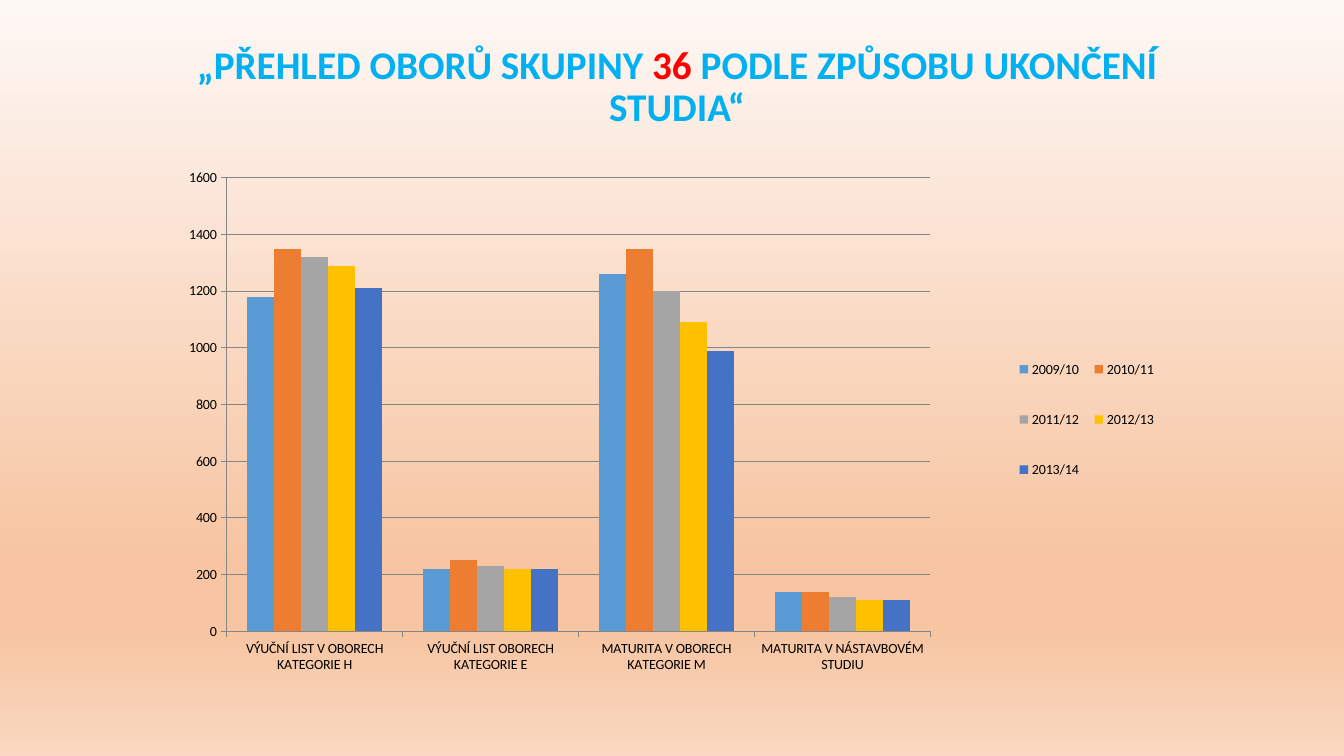
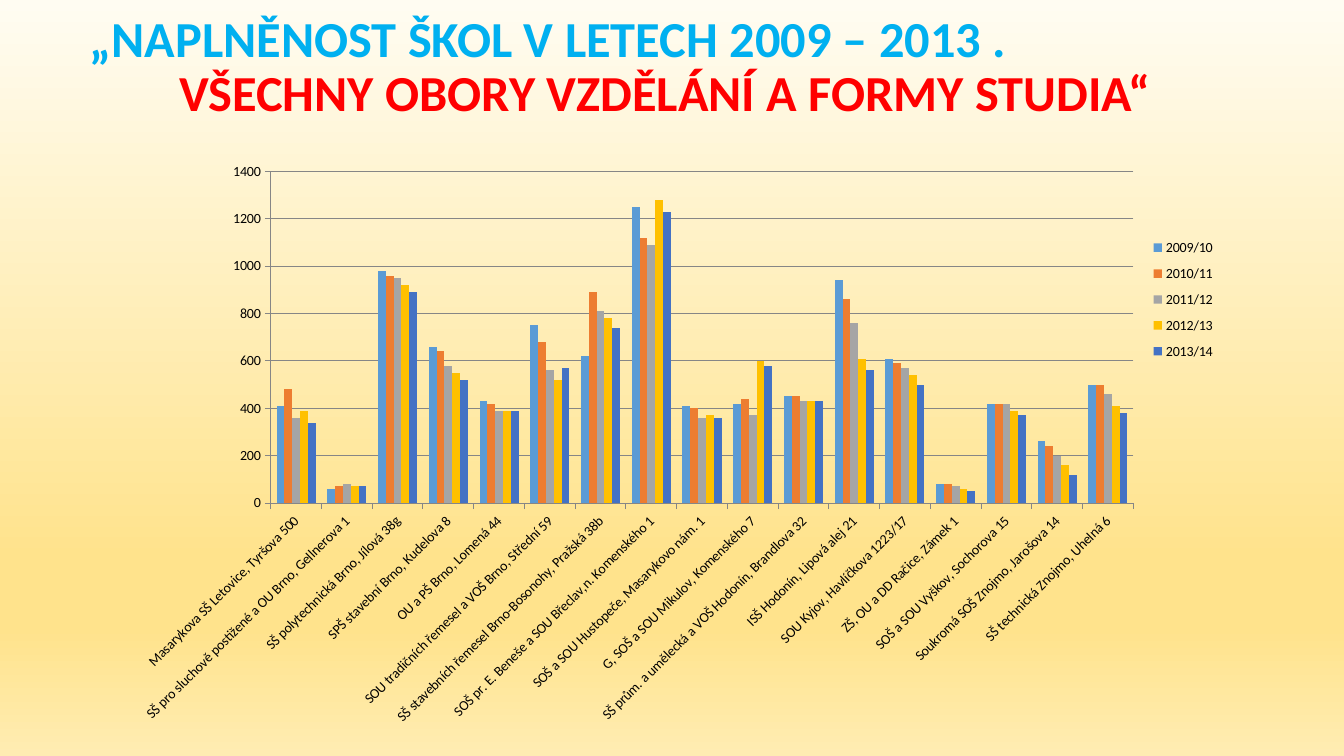
from lxml import etree
from pptx import Presentation
from pptx import util as u
from pptx.chart.data import CategoryChartData
from pptx.dml.color import RGBColor
from pptx.enum import chart as ch, text as tx
from pptx.oxml.ns import qn

PX = 914400 / 100.8
WIDE, HIGH = 1344, 756
FONT = "Calibri"
SKY = RGBColor(0x00, 0xB0, 0xF0)
RED = RGBColor(0xFF, 0x00, 0x00)
BLACK = RGBColor(0x00, 0x00, 0x00)
GREY = RGBColor(0x86, 0x86, 0x86)
HUES = [RGBColor(0x5B, 0x9B, 0xD5), RGBColor(0xED, 0x7D, 0x31),
        RGBColor(0xA5, 0xA5, 0xA5), RGBColor(0xFF, 0xC0, 0x00),
        RGBColor(0x44, 0x72, 0xC4)]
STOPS = (0, 74, 83, 100)
PEACH = [RGBColor(0xFE, 0xF8, 0xF5), RGBColor(0xF7, 0xC5, 0xA2),
         RGBColor(0xF7, 0xC5, 0xA2), RGBColor(0xFA, 0xD8, 0xC1)]
GOLD = [RGBColor(0xFF, 0xFC, 0xF2), RGBColor(0xFF, 0xE3, 0x8C),
        RGBColor(0xFF, 0xE3, 0x8C), RGBColor(0xFF, 0xEC, 0xB2)]
YEARS = ["2009/10", "2010/11", "2011/12", "2012/13", "2013/14"]

EXAMS = [
    ("VÝUČNÍ LIST V OBORECH KATEGORIE H", (1180, 1350, 1320, 1290, 1210)),
    ("VÝUČNÍ LIST OBORECH KATEGORIE E", (220, 250, 230, 220, 220)),
    ("MATURITA V OBORECH KATEGORIE M", (1260, 1350, 1200, 1090, 990)),
    ("MATURITA V NÁSTAVBOVÉM STUDIU", (140, 140, 120, 110, 110)),
]
SCHOOLS = [
    ("Masarykova SŠ Letovice, Tyršova 500", (410, 480, 360, 390, 340)),
    ("SŠ pro sluchově postižené a OU Brno, Gellnerova 1", (60, 70, 80, 70, 70)),
    ("SŠ polytechnická Brno, Jílová 38g", (980, 960, 950, 920, 890)),
    ("SPŠ stavební Brno, Kudelova 8", (660, 640, 580, 550, 520)),
    ("OU a PŠ Brno, Lomená 44", (430, 420, 390, 390, 390)),
    ("SOU tradičních řemesel a VOŠ Brno, Střední 59", (750, 680, 560, 520, 570)),
    ("SŠ stavebních řemesel Brno-Bosonohy, Pražská 38b", (620, 890, 810, 780, 740)),
    ("SOŠ pr. E. Beneše a SOU Břeclav,n. Komenského 1", (1250, 1120, 1090, 1280, 1230)),
    ("SOŠ a SOU Hustopeče, Masarykovo nám. 1", (410, 400, 360, 370, 360)),
    ("G, SOŠ a SOU Mikulov, Komenského 7", (420, 440, 370, 600, 580)),
    ("SŠ prům. a umělecká a VOŠ Hodonín, Brandlova 32", (450, 450, 430, 430, 430)),
    ("ISŠ Hodonín, Lipová alej 21", (940, 860, 760, 610, 560)),
    ("SOU Kyjov, Havlíčkova 1223/17", (610, 590, 570, 540, 500)),
    ("ZŠ, OU a DD Račice, Zámek 1", (80, 80, 70, 60, 50)),
    ("SOŠ a SOU Vyškov, Sochorova 15", (420, 420, 420, 390, 370)),
    ("Soukromá SOŠ Znojmo, Jarošova 14", (260, 240, 200, 160, 120)),
    ("SŠ technická Znojmo, Uhelná 6", (500, 500, 460, 410, 380)),
]


def px(num):
    return u.Emu(round(num * PX))


def add_page(deck, tints):
    page = deck.slides.add_slide(deck.slide_layouts[6])
    fill = page.background.fill
    fill.gradient()
    fill.gradient_angle = 270
    ramp = page.element.find(".//" + qn("a:gsLst"))
    for stop in list(ramp):
        ramp.remove(stop)
    for pos, tint in zip(STOPS, tints):
        stop = etree.SubElement(ramp, qn("a:gs"), pos=str(pos * 1000))
        etree.SubElement(stop, qn("a:srgbClr"), val=str(tint))
    return page


def add_title(page, box, size, lines):
    frame = page.shapes.add_textbox(*map(px, box)).text_frame
    frame.word_wrap = True
    frame.vertical_anchor = tx.MSO_ANCHOR.MIDDLE
    for row, (inset, runs) in enumerate(lines):
        para = frame.add_paragraph() if row else frame.paragraphs[0]
        para.line_spacing = 0.9
        para.alignment = tx.PP_ALIGN.LEFT if inset else tx.PP_ALIGN.CENTER
        if inset:
            para._p.get_or_add_pPr().set("marL", str(px(inset)))
        for words, hue in runs:
            run = para.add_run()
            run.text = words
            font = run.font
            font.name, font.size, font.bold = FONT, u.Pt(size), True
            font.color.rgb = hue


def set_place(part, slot, area, inner=False):
    for old in part.findall(qn("c:layout")):
        part.remove(old)
    node = etree.Element(qn("c:layout"))
    part.insert(slot, node)
    man = etree.SubElement(node, qn("c:manualLayout"))
    rules = [("layoutTarget", "inner")] if inner else []
    rules += [("xMode", "edge"), ("yMode", "edge")]
    rules += zip("xywh", map(str, area))
    for name, val in rules:
        etree.SubElement(man, qn("c:" + name), val=val)


def style_line(line):
    line.color.rgb = GREY
    line.width = u.Pt(0.75)


def add_bars(page, box, rows, top, plot, key, turn=0):
    data = CategoryChartData()
    data.categories = [name for name, _ in rows]
    for year, vals in zip(YEARS, zip(*(vals for _, vals in rows))):
        data.add_series(year, vals)
    kind = ch.XL_CHART_TYPE.COLUMN_CLUSTERED
    chart = page.shapes.add_chart(kind, *map(px, box), data).chart
    chart.has_title = False
    chart.font.name, chart.font.size = FONT, u.Pt(10)
    chart.font.color.rgb = BLACK

    bars = chart.plots[0]
    bars.gap_width, bars.overlap = 150, 0
    bars.vary_by_categories = False
    for bar, hue in zip(bars.series, HUES):
        bar.format.fill.solid()
        bar.format.fill.fore_color.rgb = hue

    base, scale = chart.category_axis, chart.value_axis
    for axis in (base, scale):
        axis.major_tick_mark = ch.XL_TICK_MARK.OUTSIDE
        style_line(axis.format.line)
    scale.minimum_scale, scale.maximum_scale = 0, top
    scale.major_unit = 200
    scale.has_major_gridlines = True
    style_line(scale.major_gridlines.format.line)
    if turn:
        base.tick_labels.font.size = u.Pt(10)
        body = base._element.find(qn("c:txPr")).find(qn("a:bodyPr"))
        body.set("rot", str(turn * 60000))

    chart.has_legend = True
    chart.legend.position = ch.XL_LEGEND_POSITION.RIGHT
    chart.legend.include_in_layout = False
    set_place(chart.legend._element, 1, key)
    area = chart._chartSpace.find(".//" + qn("c:plotArea"))
    set_place(area, 0, plot, True)


def main():
    deck = Presentation()
    deck.slide_width, deck.slide_height = px(WIDE), px(HIGH)

    page = add_page(deck, PEACH)
    add_title(page, (183, 12, 988, 152), 28, [
        (0, [("„PŘEHLED OBORŮ SKUPINY ", SKY), ("36", RED),
             (" PODLE ZPŮSOBU UKONČENÍ STUDIA“", SKY)])])
    add_bars(page, (115, 136, 1117, 597), EXAMS, 1600,
             (0.1, 0.07, 0.63, 0.76), (0.8, 0.32, 0.14, 0.31))

    page = add_page(deck, GOLD)
    add_title(page, (0, 11, 1330, 115), 36, [
        (80, [("„NAPLNĚNOST ŠKOL V LETECH 2009 – 2013 .", SKY)]),
        (0, [("VŠECHNY OBORY VZDĚLÁNÍ A FORMY STUDIA“", RED)])])
    add_bars(page, (127, 154, 1106, 582), SCHOOLS, 1400,
             (0.13, 0.03, 0.78, 0.57), (0.92, 0.13, 0.07, 0.24), -45)

    deck.save("out.pptx")


if __name__ == "__main__":
    main()
